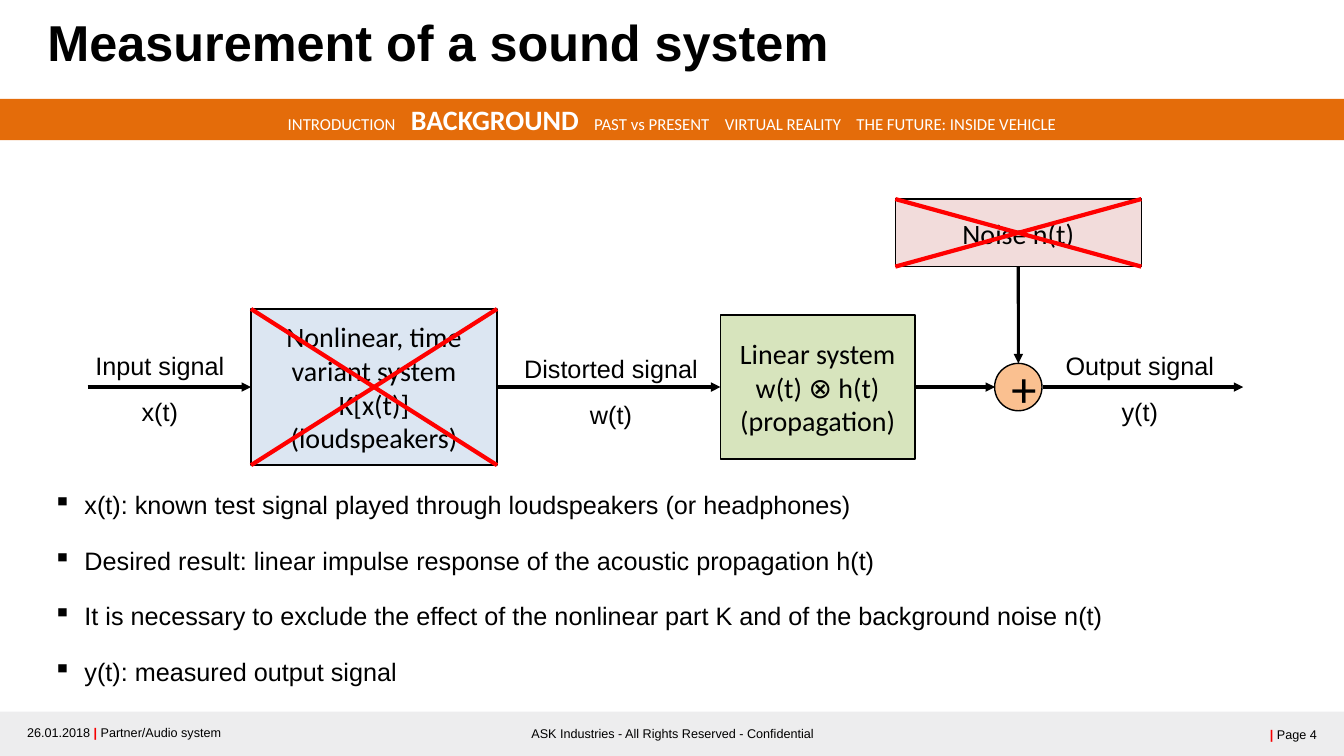
from lxml import etree
from pptx import Presentation
from pptx import util as u
from pptx.dml.color import RGBColor
from pptx.enum import shapes, text
from pptx.oxml.ns import qn

BLACK = RGBColor(0, 0, 0)
WHITE = RGBColor(255, 255, 255)
RED = RGBColor(255, 0, 0)
BAR_RED = RGBColor(0xF6, 0, 0)
ORANGE = RGBColor(0xE4, 0x6C, 0x0A)
GREY = RGBColor(0xED, 0xED, 0xEE)
BLUE = RGBColor(0xDC, 0xE6, 0xF2)
GREEN = RGBColor(0xD7, 0xE4, 0xBD)
PEACH = RGBColor(0xFA, 0xC0, 0x90)
PINK = RGBColor(0xF2, 0xDC, 0xDB)

LEFT, CENTER, RIGHT = text.PP_ALIGN.LEFT, text.PP_ALIGN.CENTER, text.PP_ALIGN.RIGHT
TOP, MIDDLE = text.MSO_ANCHOR.TOP, text.MSO_ANCHOR.MIDDLE
RECTANGLE, OVAL = shapes.MSO_SHAPE.RECTANGLE, shapes.MSO_SHAPE.OVAL

WIDTH, HEIGHT = 13.33, 7.5
AXIS = 3.84      # height of the signal path
SUM_X = 10.1     # centre of the adder and the noise source
TITLE = "Measurement of a sound system"
SECTIONS = ["INTRODUCTION", "BACKGROUND", "PAST vs PRESENT", "VIRTUAL REALITY",
            "THE FUTURE: INSIDE VEHICLE"]
CURRENT_SECTION = "BACKGROUND"

# name: preset, centre x, centre y, width, height, fill, font size, lines
BLOCKS = {
    "nonlinear": (RECTANGLE, 3.71, AXIS, 2.44, 1.55, BLUE, 20,
                  ["Nonlinear, time variant system", "K[x(t)]", "(loudspeakers)"]),
    "linear": (RECTANGLE, 8.11, AXIS, 1.93, 1.43, GREEN, 20,
               ["Linear system", "w(t) ⊗ h(t)", "(propagation)"]),
    "adder": (OVAL, SUM_X, AXIS, 0.47, 0.47, PEACH, 36, ["+"]),
    "noise": (RECTANGLE, SUM_X, 2.31, 2.44, 0.67, PINK, 20, ["Noise n(t)"]),
}
EXCLUDED = ["nonlinear", "noise"]

# start, end, (block, side) joined at the start, (block, side) joined at the end
ARROWS = [
    ((0.87, AXIS), (2.49, AXIS), None, ("nonlinear", 1)),
    ((4.93, AXIS), (7.15, AXIS), ("nonlinear", 3), ("linear", 1)),
    ((9.08, AXIS), (9.87, AXIS), ("linear", 3), None),
    ((10.34, AXIS), (12.33, AXIS), None, None),
    ((SUM_X, 2.65), (SUM_X, 3.61), ("noise", 2), ("adder", 0)),
]

# left, top, width, lines
SIGNALS = [
    (0.84, 3.28, 1.49, ["Input signal", "x(t)"]),
    (5.09, 3.31, 1.94, ["Distorted signal", "w(t)"]),
    (10.46, 3.28, 1.69, ["Output signal", "y(t)"]),
]
BULLETS = [
    "x(t): known test signal played through loudspeakers (or headphones)",
    "Desired result: linear impulse response of the acoustic propagation h(t)",
    "It is necessary to exclude the effect of the nonlinear part K"
    " and of the background noise n(t)",
    "y(t): measured output signal",
]
# left, top, width, alignment, runs; the bar is red
FOOTERS = [
    (0.17, 7.14, 3.3, LEFT, ["26.01.2018 ", "| ", "Partner/Audio system"]),
    (4.73, 7.15, 3.88, CENTER, ["ASK Industries - All Rights Reserved - Confidential"]),
    (11.8, 7.16, 1.36, RIGHT, ["| ", "Page 4"]),
]


def inches(*lengths):
    return [u.Inches(length) for length in lengths]


def style(paragraph, size, font="Arial", color=BLACK, align=LEFT):
    paragraph.alignment = align
    paragraph.font.size = u.Pt(size)
    paragraph.font.name = font
    paragraph.font.color.rgb = color


def fill_lines(frame, lines, size, font="Arial", align=LEFT):
    """Write one paragraph per line and return the paragraphs."""
    frame.text = "\n".join(lines)
    for paragraph in frame.paragraphs:
        style(paragraph, size, font, align=align)
    return frame.paragraphs


def add_box(slide, preset, left, top, width, height, fill, outline=None):
    shape = slide.shapes.add_shape(preset, *inches(left, top, width, height))
    shape.shadow.inherit = False
    shape.fill.solid()
    shape.fill.fore_color.rgb = fill
    if outline is None:
        shape.line.fill.background()
    else:
        shape.line.color.rgb = outline
        shape.line.width = u.Pt(1)
    shape.text_frame.vertical_anchor = MIDDLE
    return shape


def add_text(slide, left, top, width, height, anchor=TOP, wrap=True):
    frame = slide.shapes.add_textbox(*inches(left, top, width, height)).text_frame
    frame.word_wrap = wrap
    frame.vertical_anchor = anchor
    return frame


def add_line(slide, start, end, color, weight, arrow=False):
    line = slide.shapes.add_connector(shapes.MSO_CONNECTOR.STRAIGHT, *start, *end)
    line.line.color.rgb = color
    line.line.width = u.Pt(weight)
    if arrow:
        etree.SubElement(line.line._get_or_add_ln(), qn("a:tailEnd"), type="triangle")
    etree.SubElement(line._element.spPr, qn("a:effectLst"))
    return line


def add_title(slide):
    title = slide.shapes.title
    title.left, title.top, title.width, title.height = inches(0.37, 0.13, 8.43, 0.95)
    frame = title.text_frame
    frame.vertical_anchor = TOP
    frame.auto_size = text.MSO_AUTO_SIZE.NONE
    paragraph = fill_lines(frame, [TITLE], 36)[0]
    paragraph.font.bold = True
    paragraph.line_spacing = 0.9


def add_section_banner(slide):
    banner = add_box(slide, RECTANGLE, 0, 0.98, WIDTH, 0.41, ORANGE)
    paragraph = banner.text_frame.paragraphs[0]
    style(paragraph, 12, "Calibri", WHITE, CENTER)
    for index, section in enumerate(SECTIONS):
        if index:
            gap = paragraph.add_run()
            gap.text = " "
            gap.font._element.set("spc", "810")  # widens the space to a gap
        run = paragraph.add_run()
        run.text = section
        if section == CURRENT_SECTION:
            run.font.size = u.Pt(20)
            run.font.bold = True


def add_footer(slide):
    add_box(slide, RECTANGLE, 0, 7.06, WIDTH, HEIGHT - 7.06, GREY)
    for left, top, width, align, runs in FOOTERS:
        paragraph = add_text(slide, left, top, width, 0.25, MIDDLE).paragraphs[0]
        style(paragraph, 9, align=align)
        for words in runs:
            run = paragraph.add_run()
            run.text = words
            if words == "| ":
                run.font.bold = True
                run.font.color.rgb = BAR_RED


def add_diagram(slide):
    blocks = {}
    for name, (preset, x, y, width, height, fill, size, lines) in BLOCKS.items():
        block = add_box(slide, preset, x - width / 2, y - height / 2,
                        width, height, fill, BLACK)
        fill_lines(block.text_frame, lines, size, "Calibri", CENTER)
        blocks[name] = block
    for start, end, source, target in ARROWS:
        arrow = add_line(slide, inches(*start), inches(*end), BLACK, 2.25, arrow=True)
        if source:
            arrow.begin_connect(blocks[source[0]], source[1])
        if target:
            arrow.end_connect(blocks[target[0]], target[1])
    for left, top, width, lines in SIGNALS:
        frame = add_text(slide, left, top, width, 1.01, wrap=False)
        for paragraph in fill_lines(frame, lines, 18, align=CENTER):
            paragraph.line_spacing = 1.5
    for name in EXCLUDED:
        block = blocks[name]
        right, bottom = block.left + block.width, block.top + block.height
        add_line(slide, (block.left, bottom), (right, block.top), RED, 3)
        add_line(slide, (block.left, block.top), (right, bottom), RED, 3)


def add_bullets(slide):
    frame = add_text(slide, 0.43, 4.81, 10.9, 2.01)
    frame.text = "\n".join(BULLETS)
    for index, paragraph in enumerate(frame.paragraphs):
        properties = paragraph._p.get_or_add_pPr()
        properties.set("marL", str(u.Inches(0.31)))
        properties.set("indent", str(-u.Inches(0.31)))
        etree.SubElement(properties, qn("a:buChar"), char="▪")
        style(paragraph, 18)
        if index:
            paragraph.space_before = u.Pt(18)


def main():
    presentation = Presentation()
    presentation.slide_width, presentation.slide_height = inches(WIDTH, HEIGHT)
    slide = presentation.slides.add_slide(presentation.slide_layouts[5])
    add_footer(slide)
    add_title(slide)
    add_diagram(slide)
    add_bullets(slide)
    add_section_banner(slide)
    presentation.save("out.pptx")


if __name__ == "__main__":
    main()
